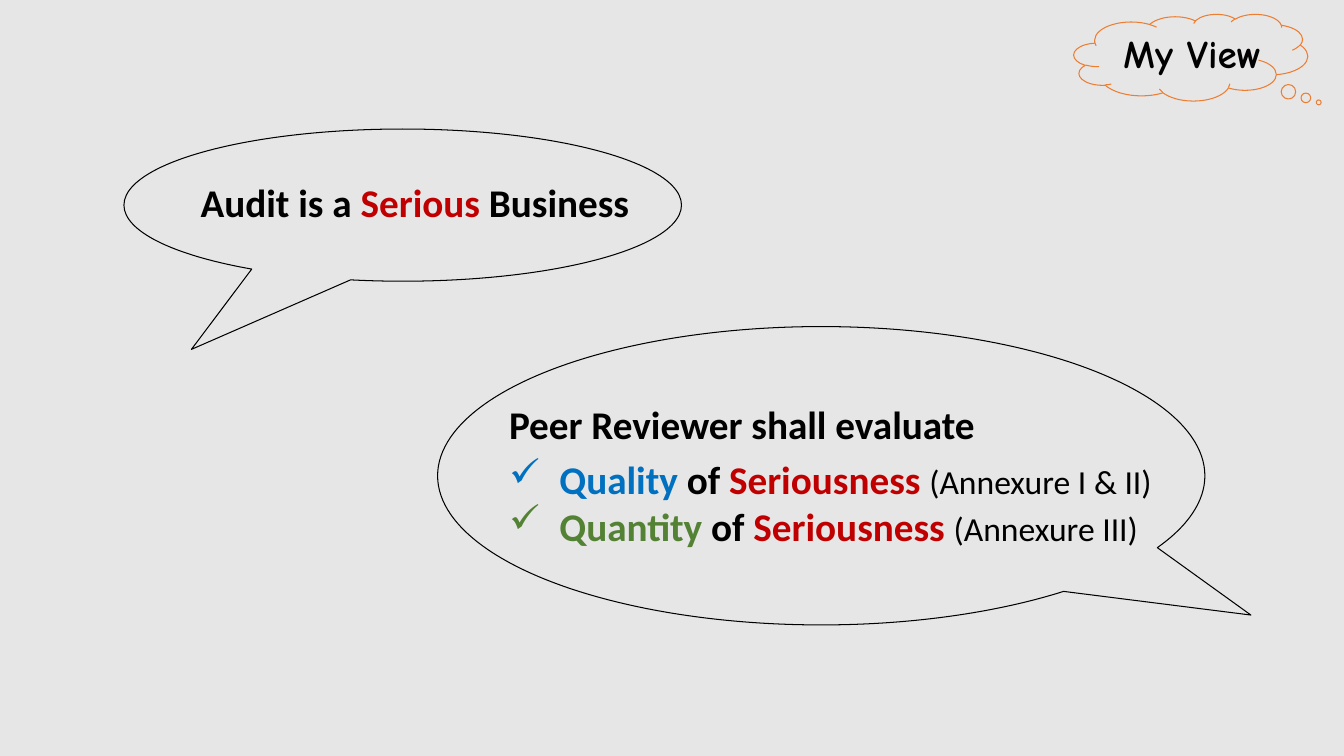
import pptx
import pptx.dml.color
import pptx.enum.shapes
import pptx.enum.text
import pptx.oxml
import pptx.oxml.ns
import pptx.util
from dataclasses import dataclass
from pptx.util import Inches


@dataclass(frozen=True)
class Theme:
    body_font: str = "Calibri"
    title_font: str = "Comic Neue"
    text_size: int = 28
    note_size: int = 24
    line_width: float = 0.75
    background: str = "E7E6E6"
    black: str = "000000"
    red: str = "C00000"
    blue: str = "0070C0"
    green: str = "548235"
    orange: str = "ED7D31"


THEME = Theme()
SHAPES = pptx.enum.shapes.MSO_SHAPE
ALIGN = pptx.enum.text.PP_ALIGN

TITLE = "My View"
TITLE_BOX = (10.87, 0.24, 1.91, 0.57)

# preset, (left, top, width, height), tail position, line colour
CALLOUTS = [
    (SHAPES.OVAL_CALLOUT, (1.23, 1.28, 5.53, 1.51), (-0.379, 0.948), THEME.black),
    (SHAPES.OVAL_CALLOUT, (4.34, 3.24, 7.61, 2.96), (0.56, 0.467), THEME.black),
    (SHAPES.CLOUD_CALLOUT, (10.65, 0.14, 2.32, 0.86), (0.547, 0.519), THEME.orange),
]

STATEMENT = [("Audit is a ", THEME.black), ("Serious", THEME.red), (" Business", THEME.black)]
STATEMENT_BOX = (1.78, 1.72, 4.67, 0.57)

REVIEW_HEADING = [("Peer Reviewer shall evaluate", THEME.black)]
REVIEW_CHECKS = [
    ("Quality", THEME.blue, "(Annexure I & II)"),
    ("Quantity", THEME.green, "(Annexure III)"),
]
REVIEW_LEFT, REVIEW_WIDTH, LINE_HEIGHT = 4.95, 7.01, 0.57
HEADING_TOP, CHECKS_TOP, CHECK_PITCH = 3.92, 4.47, 0.46
CHECK_INDENT = 0.5


def color(value):
    return pptx.dml.color.RGBColor.from_string(value)


def add_callout(slide, preset, area, tail, line_color):
    callout = slide.shapes.add_shape(preset, *map(Inches, area))
    callout.shadow.inherit = False
    callout.fill.background()
    callout.line.color.rgb = color(line_color)
    callout.line.width = pptx.util.Pt(THEME.line_width)
    for index, value in enumerate(tail):
        callout.adjustments[index] = value


def add_text(slide, area, spans, align=ALIGN.LEFT):
    """Add one line of bold coloured spans and return its paragraph."""
    box = slide.shapes.add_textbox(*map(Inches, area))
    box.text_frame.word_wrap = True
    para = box.text_frame.paragraphs[0]
    para.alignment = align
    para.font.name = THEME.body_font
    for text, span_color in spans:
        add_span(para, text, span_color, THEME.text_size, True)
    return para


def add_span(para, text, span_color, size, bold):
    span = para.add_run()
    span.text = text
    span.font.size = pptx.util.Pt(size)
    span.font.bold = bold
    span.font.color.rgb = color(span_color)


def add_check_mark(para):
    properties = para._p.get_or_add_pPr()
    properties.set("marL", str(Inches(CHECK_INDENT)))
    properties.set("indent", str(-Inches(CHECK_INDENT)))
    mark = pptx.oxml.parse_xml(f'<a:buChar {pptx.oxml.ns.nsdecls("a")} char="✓"/>')
    properties.insert(0, mark)


def format_title(title):
    title.left, title.top, title.width, title.height = map(Inches, TITLE_BOX)
    frame = title.text_frame
    frame.text = TITLE
    frame.word_wrap = True
    frame.auto_size = pptx.enum.text.MSO_AUTO_SIZE.NONE
    frame.vertical_anchor = pptx.enum.text.MSO_ANCHOR.TOP
    para = frame.paragraphs[0]
    para.alignment = ALIGN.CENTER
    para.font.name = THEME.title_font
    para.font.size = pptx.util.Pt(THEME.text_size)
    para.font.bold = True
    para.font.color.rgb = color(THEME.black)


def main():
    deck = pptx.Presentation()
    deck.slide_width, deck.slide_height = Inches(13.33), Inches(7.5)
    slide = deck.slides.add_slide(deck.slide_layouts[5])
    slide.background.fill.solid()
    slide.background.fill.fore_color.rgb = color(THEME.background)

    format_title(slide.shapes.title)
    for callout in CALLOUTS:
        add_callout(slide, *callout)

    add_text(slide, STATEMENT_BOX, STATEMENT, ALIGN.CENTER)
    add_text(slide, (REVIEW_LEFT, HEADING_TOP, REVIEW_WIDTH, LINE_HEIGHT), REVIEW_HEADING)
    for row, (measure, measure_color, annexure) in enumerate(REVIEW_CHECKS):
        area = (REVIEW_LEFT, CHECKS_TOP + row * CHECK_PITCH, REVIEW_WIDTH, LINE_HEIGHT)
        spans = [(measure, measure_color), (" of ", THEME.black), ("Seriousness ", THEME.red)]
        para = add_text(slide, area, spans)
        add_span(para, annexure, THEME.black, THEME.note_size, False)
        add_check_mark(para)

    deck.save("out.pptx")


if __name__ == "__main__":
    main()
